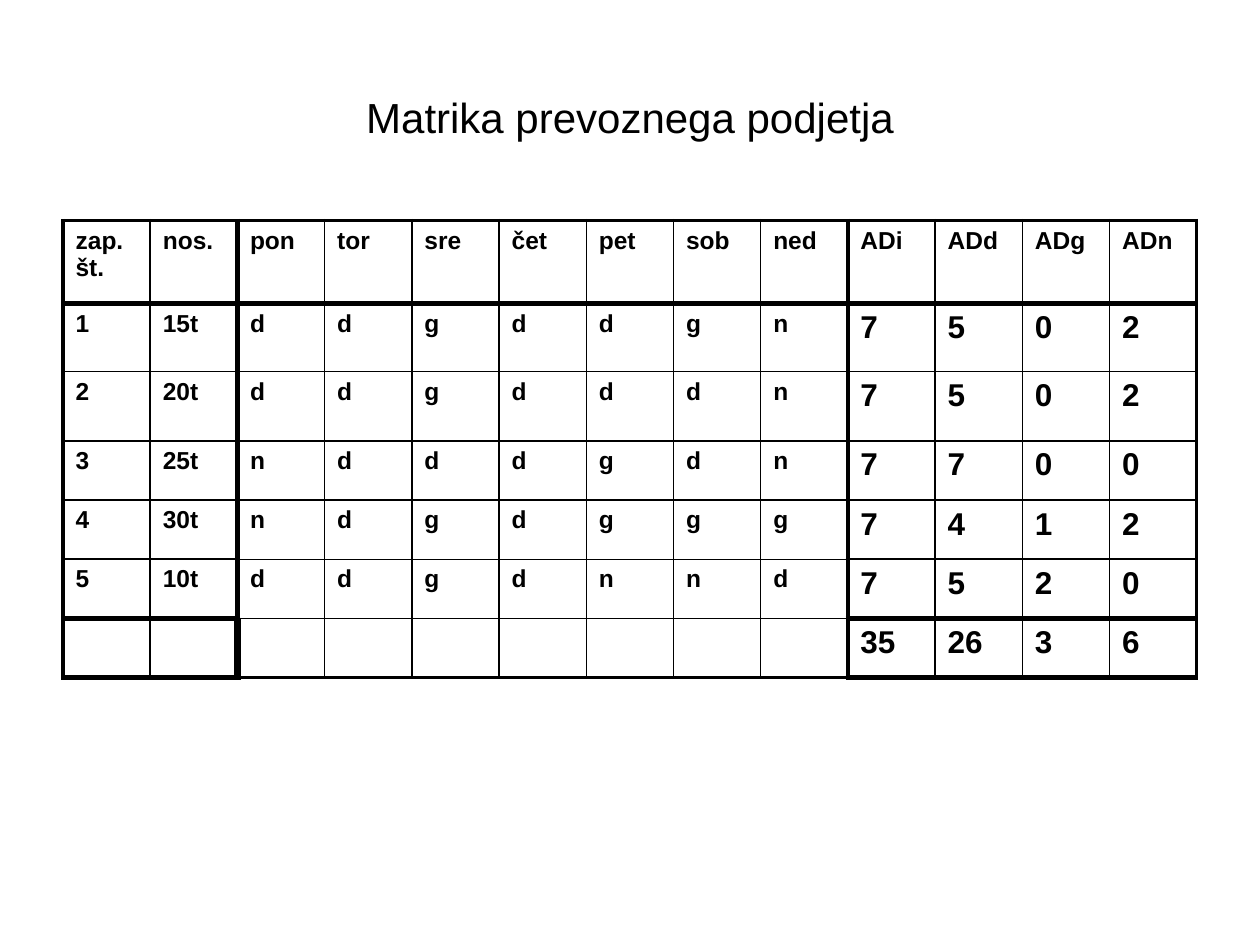
from pptx import Presentation
from pptx import util as u
from pptx.dml.color import RGBColor
from pptx.enum import text
from pptx.oxml.ns import qn
from lxml import etree

BLACK = RGBColor(0x00, 0x00, 0x00)
FONT = "Arial"

HEADER = ["zap. št.", "nos.", "pon", "tor", "sre", "čet", "pet", "sob", "ned",
          "ADi", "ADd", "ADg", "ADn"]
# Load capacity, status for each weekday, totals
VEHICLES = [
    ("15t", "ddgddgn", (7, 5, 0, 2)),
    ("20t", "ddgdddn", (7, 5, 0, 2)),
    ("25t", "ndddgdn", (7, 7, 0, 0)),
    ("30t", "ndgdggg", (7, 4, 1, 2)),
    ("10t", "ddgdnnd", (7, 5, 2, 0)),
]
TOTALS = (35, 26, 3, 6)
ROW_HEIGHTS = [0.66, 0.54, 0.55, 0.47, 0.47, 0.47, 0.47]
FIRST_DAY, FIRST_TOTAL = 2, 9

# Widths in points of the grid lines, from the left and from the top
COLUMN_LINES = [2.25, 1, 3, 1, 1, 1, 1, 1, 1, 3, 1, 1, 1, 2.25]
ROW_LINES = [2.25, 3, 1, 1, 1, 1.5, 3, 3]
DAY_ROW_LINES = [2.25, 3, 1, 1, 1, 1, 1, 2.25]


def write(frame, words, size, bold=False, align=text.PP_ALIGN.LEFT):
    para = frame.paragraphs[0]
    para.alignment = align
    span = para.add_run()
    span.text = words
    span.font.name = FONT
    span.font.size = u.Pt(size)
    span.font.bold = bold
    span.font.color.rgb = BLACK
    return para


def space_before(para, percent):
    spacing = etree.SubElement(para._p.get_or_add_pPr(), qn("a:spcBef"))
    etree.SubElement(spacing, qn("a:spcPct"), val=str(percent * 1000))


def set_borders(cell, widths):
    """Draw black borders; widths are left, right, top, bottom in points."""
    properties = cell._tc.get_or_add_tcPr()
    for position, (side, width) in enumerate(zip("LRTB", widths)):
        line = etree.Element(qn(f"a:ln{side}"), w=str(u.Pt(width)))
        fill = etree.SubElement(line, qn("a:solidFill"))
        etree.SubElement(fill, qn("a:srgbClr"), val=str(BLACK))
        properties.insert(position, line)


def add_title(page, left, top, width, height):
    box = page.shapes.add_textbox(left, top, width, height)
    frame = box.text_frame
    frame.word_wrap = True
    frame.vertical_anchor = text.MSO_ANCHOR.MIDDLE
    write(frame, "Matrika prevoznega podjetja", 24, align=text.PP_ALIGN.CENTER)


def add_matrix(page, left, top, width, height):
    rows = [HEADER]
    for number, (load, days, totals) in enumerate(VEHICLES, 1):
        rows.append([number, load, *days, *totals])
    rows.append([""] * FIRST_TOTAL + list(TOTALS))

    table = page.shapes.add_table(len(rows), len(HEADER), left, top, width, height).table
    table.first_row = table.horz_banding = False
    for column in table.columns:
        column.width = width // len(HEADER)

    for r, values in enumerate(rows):
        table.rows[r].height = u.Inches(ROW_HEIGHTS[r])
        column_lines = list(COLUMN_LINES)
        if r == len(rows) - 1:
            column_lines[FIRST_DAY] = 4.5
        for c, value in enumerate(values):
            cell = table.cell(r, c)
            cell.fill.background()
            is_day = FIRST_DAY <= c < FIRST_TOTAL
            row_lines = DAY_ROW_LINES if is_day else ROW_LINES
            set_borders(cell, column_lines[c:c + 2] + row_lines[r:r + 2])
            if value != "":
                size = 18 if r > 0 and c >= FIRST_TOTAL else 14
                para = write(cell.text_frame, str(value), size, bold=True)
                space_before(para, 20)


def main():
    deck = Presentation()
    deck.slide_width, deck.slide_height = u.Inches(10), u.Inches(7.5)
    page = deck.slides.add_slide(deck.slide_layouts[6])
    add_title(page, u.Inches(0.5), u.Inches(0.3), u.Inches(9), u.Inches(1.25))
    add_matrix(page, u.Inches(0.5), u.Inches(1.75), u.Inches(9),
               u.Inches(sum(ROW_HEIGHTS)))
    deck.save("out.pptx")


if __name__ == "__main__":
    main()
